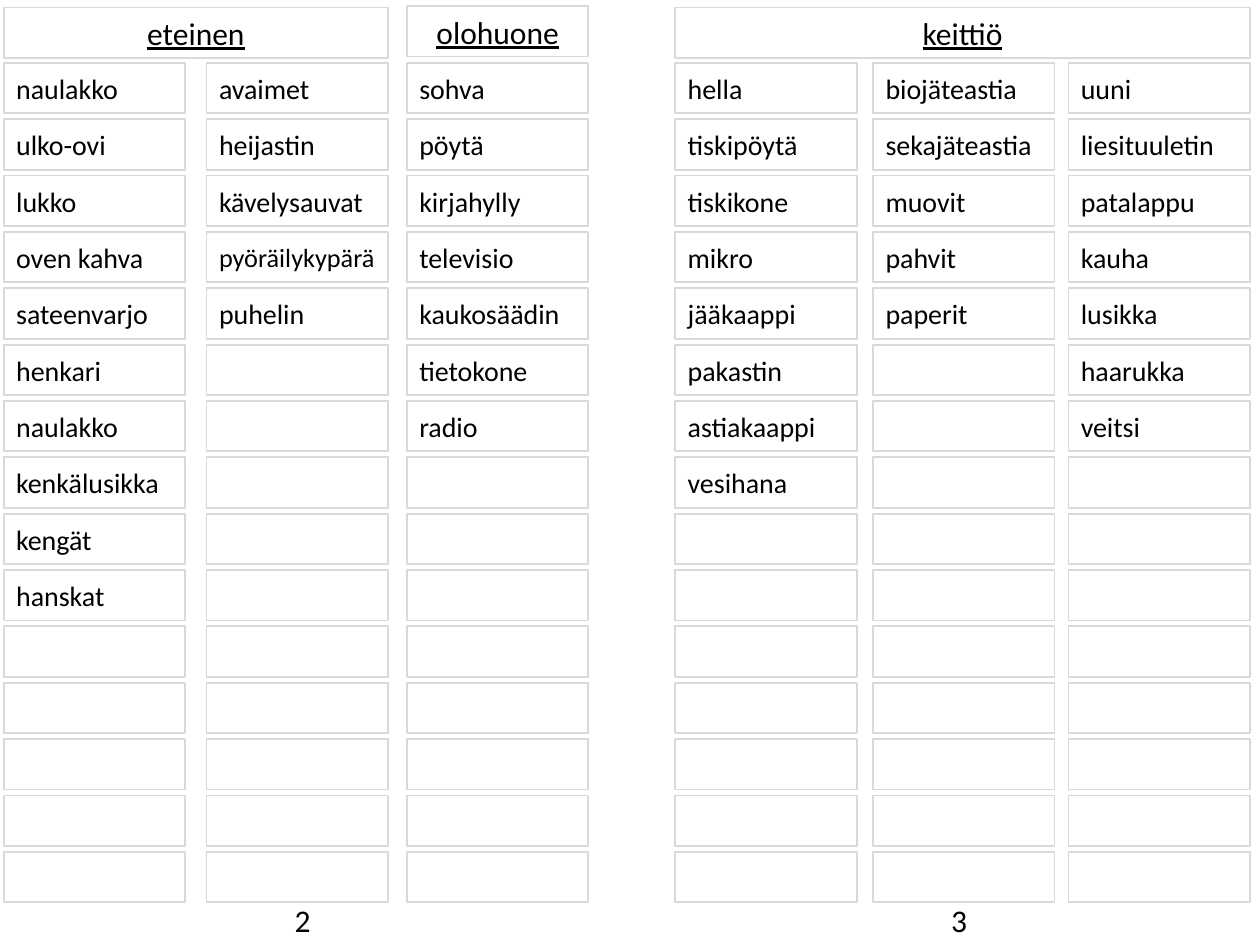
from dataclasses import dataclass
from pptx import Presentation
from pptx.dml.color import RGBColor
from pptx.enum.shapes import MSO_SHAPE as Shape
from pptx.enum.text import MSO_ANCHOR as Anchor, PP_ALIGN as Align
from pptx.util import Inches, Pt


@dataclass(frozen=True)
class Theme:
    font: str = "Calibri"
    ink: RGBColor = RGBColor(0, 0, 0)
    edge: RGBColor = RGBColor(0xD9, 0xD9, 0xD9)
    head: int = 18
    word: int = 16
    tight: int = 15


theme = Theme()
deck = Presentation()
deck.slide_width, deck.slide_height = Inches(10), Inches(7.5)
slide = deck.slides.add_slide(deck.slide_layouts[6])


def write(shape, text, size, align=Align.LEFT, line=False):
    par = shape.text_frame.paragraphs[0]
    par.alignment = align
    run = par.add_run()
    run.text = text
    run.font.name = theme.font
    run.font.size = Pt(size)
    run.font.color.rgb = theme.ink
    run.font.underline = line


def add_box(left, top, width, height):
    box = slide.shapes.add_shape(
        Shape.RECTANGLE, Inches(left), Inches(top), Inches(width), Inches(height))
    box.shadow.inherit = False
    box.fill.background()
    box.line.color.rgb = theme.edge
    box.line.width = Pt(1)
    box.text_frame.word_wrap = True
    box.text_frame.vertical_anchor = Anchor.MIDDLE
    return box


# Grid: fifteen rows, evenly spread from first to last
rows, first, last = 15, 0.5, 6.76
step = (last - first) / (rows - 1)
wide, high = 1.44, 0.4

# Rooms, each with its columns of words
rooms = [
    ("eteinen", 0.06, [
        (0.03, ["naulakko", "ulko-ovi", "lukko", "oven kahva", "sateenvarjo",
                "henkari", "naulakko", "kenkälusikka", "kengät", "hanskat"]),
        (1.64, ["avaimet", "heijastin", "kävelysauvat", "pyöräilykypärä",
                "puhelin"]),
    ]),
    ("olohuone", 0.05, [
        (3.23, ["sohva", "pöytä", "kirjahylly", "televisio", "kaukosäädin",
                "tietokone", "radio"]),
    ]),
    ("keittiö", 0.06, [
        (5.36, ["hella", "tiskipöytä", "tiskikone", "mikro", "jääkaappi",
                "pakastin", "astiakaappi", "vesihana"]),
        (6.93, ["biojäteastia", "sekajäteastia", "muovit", "pahvit", "paperit"]),
        (8.48, ["uuni", "liesituuletin", "patalappu", "kauha", "lusikka",
                "haarukka", "veitsi"]),
    ]),
]

for room, top, cols in rooms:
    # Heading spans all columns of the room
    left, right = cols[0][0], cols[-1][0] + wide
    write(add_box(left, top, right - left, high), room, theme.head,
          Align.CENTER, True)

    # Word boxes, the rest left empty
    for left, words in cols:
        for row in range(rows):
            box = add_box(left, first + row * step, wide, high)
            if row < len(words):
                word = words[row]
                size = theme.tight if word == "pyöräilykypärä" else theme.word
                write(box, word, size)

# Page numbers
for page, left, width in [("2", 2.24, 0.34), ("3", 7.45, 0.43)]:
    label = slide.shapes.add_textbox(
        Inches(left), Inches(7.1), Inches(width), Inches(high))
    label.text_frame.word_wrap = True
    write(label, page, theme.head)

deck.save("out.pptx")
